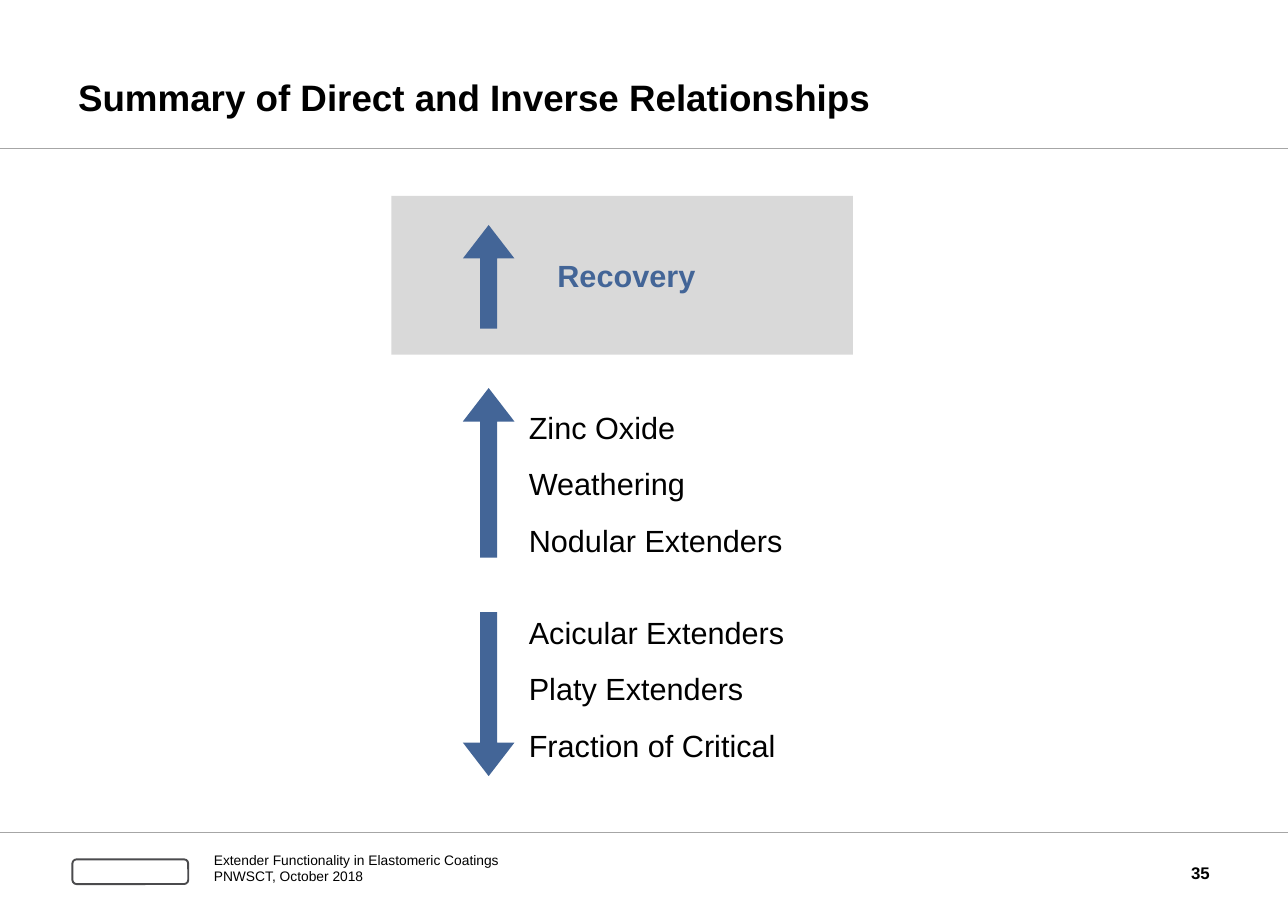
from lxml.etree import SubElement
from pptx import Presentation
from pptx.dml.color import RGBColor
from pptx.enum.shapes import MSO_CONNECTOR as Link, MSO_SHAPE as Form
from pptx.enum.text import MSO_ANCHOR as Anchor, MSO_AUTO_SIZE as Fit, PP_ALIGN as Align
from pptx.oxml.ns import qn
from pptx.util import Cm, Pt

HUES = {"text": "000000", "rule": "A6A6A6", "panel": "D9D9D9", "blue": "436597",
        "logo": "4B4B4D", "white": "FFFFFF"}
WIDE, HIGH = 29.69, 21.01


def hue(name):
    """Return the named colour."""
    return RGBColor.from_string(HUES[name])


def style(para, size, bold=False, color="text", align=Align.LEFT):
    """Format a whole paragraph."""
    para.alignment = align
    font = para.font
    font.name, font.size, font.bold = "Arial", Pt(size), bold
    font.color.rgb = hue(color)


def frame(shape, anchor, inset=0):
    """Prepare the text frame of a shape."""
    body = shape.text_frame
    body.word_wrap, body.auto_size = True, Fit.NONE
    body.vertical_anchor = anchor
    body.margin_left = body.margin_right = Cm(inset)
    body.margin_top = body.margin_bottom = Cm(inset)
    return body


def label(slide, box, lines, size, anchor=Anchor.MIDDLE, **look):
    """Add a text box with one paragraph per line."""
    body = frame(slide.shapes.add_textbox(*map(Cm, box)), anchor)
    body.text = "\n".join(lines)
    for para in body.paragraphs:
        style(para, size, **look)
    return body.paragraphs


def rule(slide, y, width):
    """Draw a thin line across the slide."""
    line = slide.shapes.add_connector(Link.STRAIGHT, 0, Cm(y), Cm(WIDE), Cm(y))
    line.line.color.rgb, line.line.width = hue("rule"), Pt(width)
    SubElement(line._element.spPr, qn("a:effectLst"))


def block(slide, form, box, fill):
    """Add a filled shape without outline or shadow."""
    shape = slide.shapes.add_shape(form, *map(Cm, box))
    shape.shadow.inherit = False
    shape.fill.solid()
    shape.fill.fore_color.rgb = hue(fill)
    shape.line.fill.background()
    return shape


def arrow(slide, form, top, height):
    """Add a blue trend arrow in the arrow column."""
    shape = block(slide, form, (10.67, top, 1.19, height), "blue")
    shape.adjustments[0], shape.adjustments[1] = 0.325, 0.649


def title(slide, text):
    """Place and format the slide title."""
    head = slide.shapes.title
    head.left, head.top, head.width, head.height = map(Cm, (1.8, 0.53, 26.09, 2.21))
    body = frame(head, Anchor.BOTTOM)
    body.text = text
    style(body.paragraphs[0], 24, bold=True)


def panel(slide, text):
    """Add the grey panel that names the property."""
    shape = block(slide, Form.RECTANGLE, (9.02, 4.52, 10.64, 3.66), "panel")
    body = frame(shape, Anchor.MIDDLE, 0.3)
    body.margin_left = Cm(0.5)
    body.text = text
    style(body.paragraphs[0], 20, bold=True, color="blue", align=Align.CENTER)


def factors(slide, groups):
    """List the factors, with a wider gap before each later group."""
    names = [name for group in groups for name in group]
    starts = [group[0] for group in groups[1:]]
    paras = label(slide, (12.19, 9.42, 6.7, 8.43), names, 20, Anchor.TOP)
    for para, name in zip(paras, names):
        para.space_before = Pt(23 if name in starts else 0)
        para.space_after = Pt(13)


def footer(slide):
    """Add the logo block, the talk details and the page number."""
    logo = block(slide, Form.ROUNDED_RECTANGLE, (1.67, 19.82, 2.67, 0.57), "white")
    logo.line.color.rgb, logo.line.width = hue("logo"), Pt(1.25)
    lines = ["Extender Functionality in Elastomeric Coatings", "PNWSCT, October 2018"]
    for para in label(slide, (4.93, 19.63, 12.47, 0.79), lines, 9):
        para.line_spacing = Pt(10.4)
    label(slide, (25.63, 19.53, 2.26, 1.19), ["35"], 11, bold=True, align=Align.RIGHT)


def main():
    """Build the slide and save it."""
    deck = Presentation()
    deck.slide_width, deck.slide_height = Cm(WIDE), Cm(HIGH)
    slide = deck.slides.add_slide(deck.slide_layouts[5])
    rule(slide, 3.43, 0.75)
    rule(slide, 19.2, 0.5)
    footer(slide)
    title(slide, "Summary of Direct and Inverse Relationships")
    factors(slide, [["Zinc Oxide", "Weathering", "Nodular Extenders"],
                    ["Acicular Extenders", "Platy Extenders", "Fraction of Critical"]])
    panel(slide, "Recovery")
    arrow(slide, Form.UP_ARROW, 5.19, 2.39)
    arrow(slide, Form.UP_ARROW, 8.95, 3.91)
    arrow(slide, Form.DOWN_ARROW, 14.12, 3.78)
    deck.save("out.pptx")


if __name__ == "__main__":
    main()
